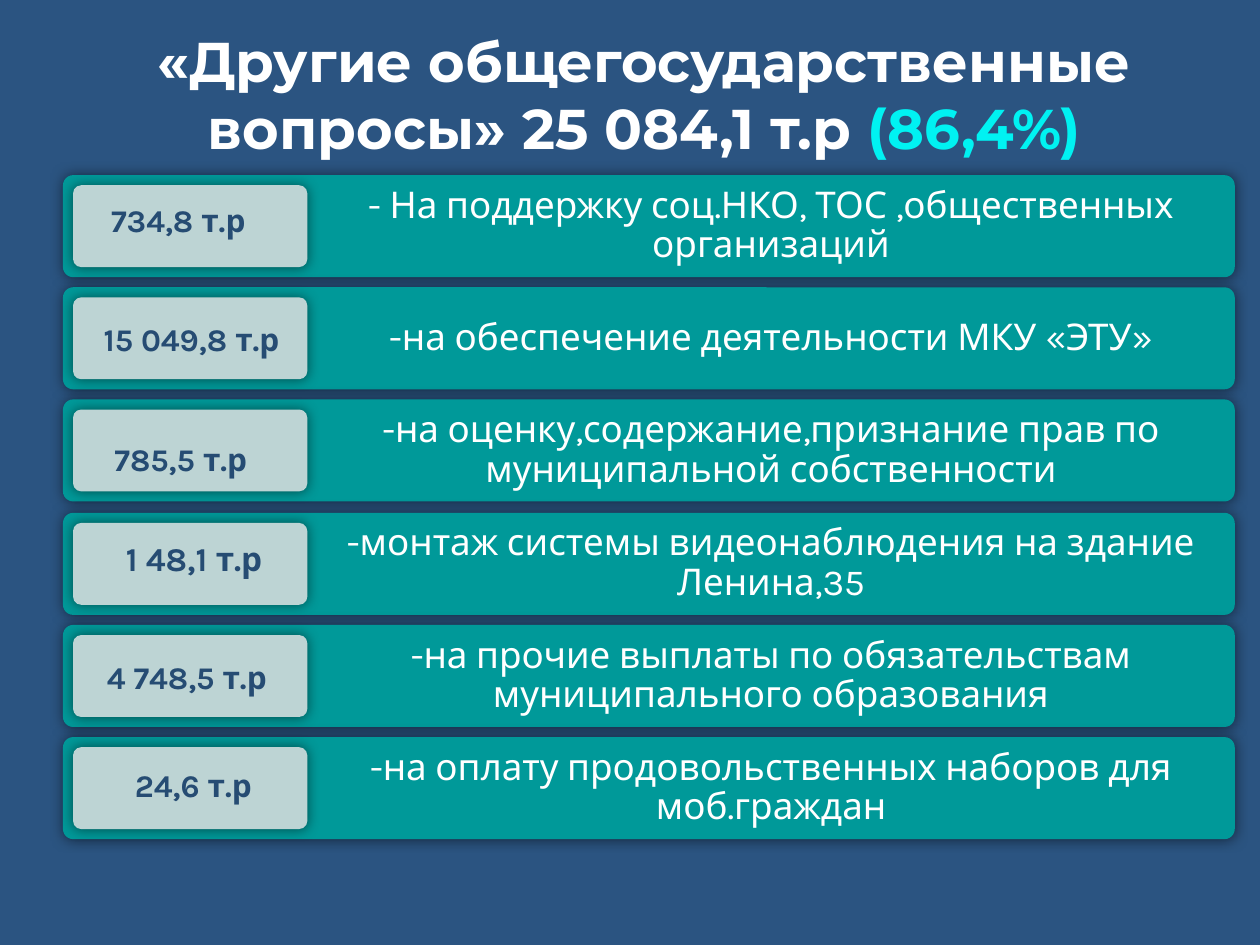
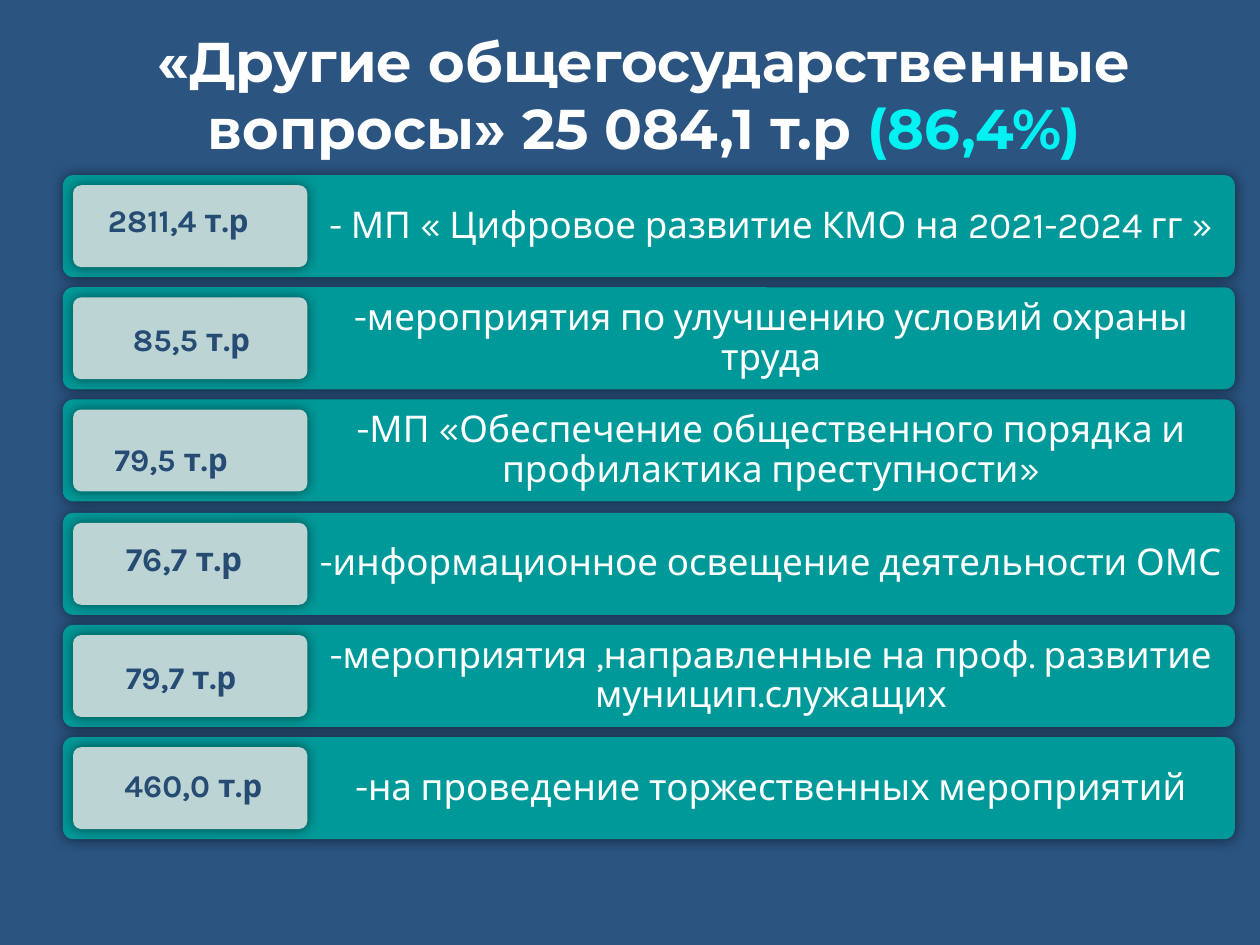
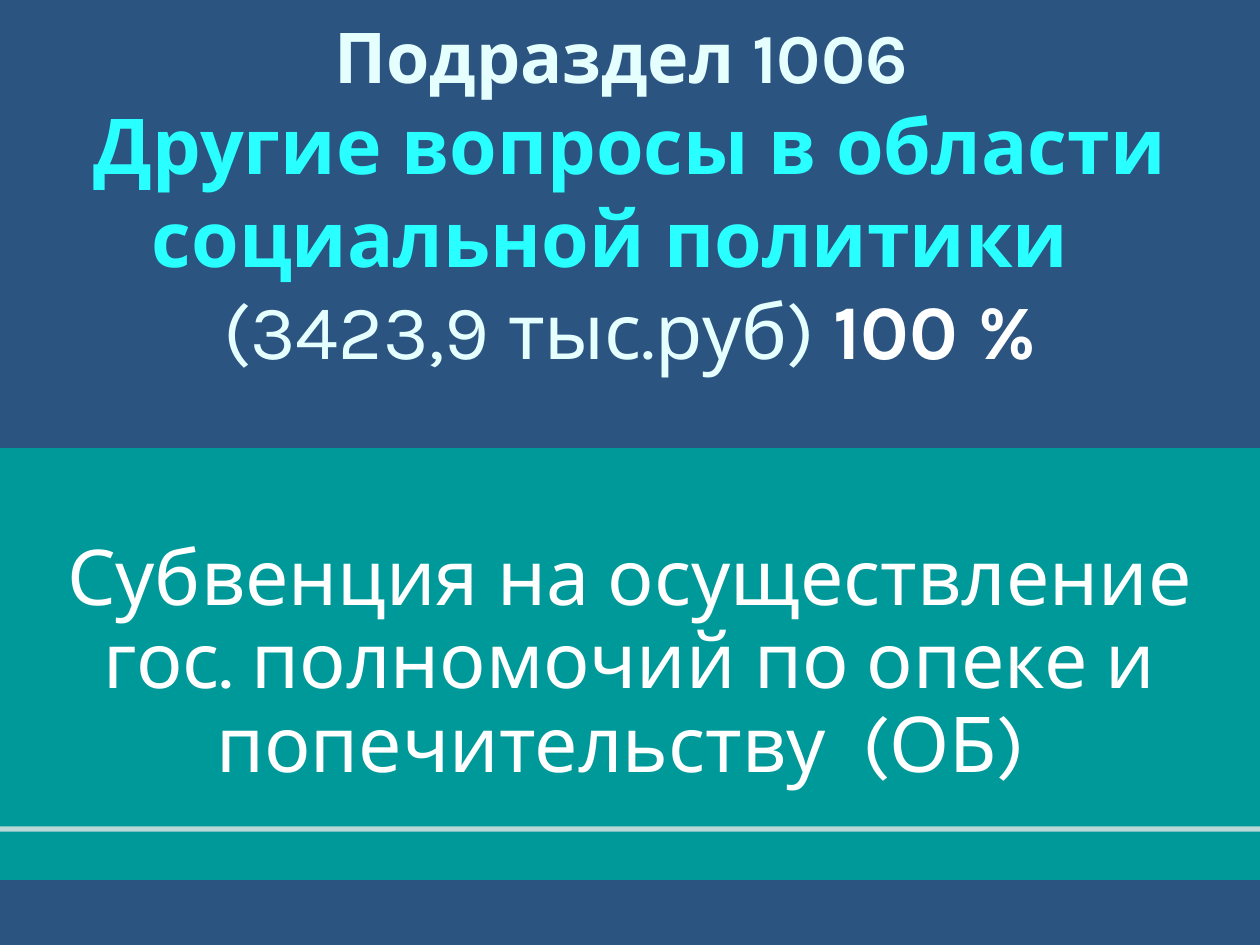
from dataclasses import dataclass

from lxml import etree
from pptx import Presentation
from pptx.dml.color import RGBColor
from pptx.enum.shapes import MSO_CONNECTOR, MSO_SHAPE
from pptx.enum.text import MSO_ANCHOR as Anchor, MSO_AUTO_SIZE, PP_ALIGN as Align
from pptx.oxml.ns import qn
from pptx.util import Emu, Pt

EMU_PER_PX = 9144  # 100 px to the inch
SLIDE_WIDTH, SLIDE_HEIGHT = 1000, 750
TITLE_ONLY = 5

NAVY, TEAL, MIST = "2B5481", "009999", "BDD4D4"
WHITE, PALE, INK = "FFFFFF", "E5FFFF", "264C73"
AQUA, CYAN, RULE = "00F2F2", "29FFFF", "CCDEDE"
BODY_FONT, TITLE_FONT = "Karla", "Montserrat"

BAR_LEFT, BAR_TOP, BAR_WIDTH, BAR_HEIGHT = 50, 139, 930, 81
BAR_PITCH = 89.2
BADGE_INSET, BADGE_WIDTH = 8, 186
PURPOSE_LEFT = BAR_LEFT + BADGE_INSET + BADGE_WIDTH


@dataclass(frozen=True)
class Box:
    left: int
    top: int
    width: int
    height: int

    def emu(self) -> tuple:
        return tuple(map(px, (self.left, self.top, self.width, self.height)))


@dataclass(frozen=True)
class Span:
    text: str
    size: int
    color: str
    bold: bool = True
    font: str = BODY_FONT


@dataclass(frozen=True)
class AmountStyle:
    top: int
    align: Align = Align.CENTER
    size: int = 18


@dataclass(frozen=True)
class Expense:
    amount: str
    left: int
    width: int
    purpose: str


AMOUNT_STYLES = [
    AmountStyle(155),
    AmountStyle(249),
    AmountStyle(344, Align.LEFT),
    AmountStyle(422, Align.LEFT, 19),
    AmountStyle(517, Align.LEFT),
    AmountStyle(603),
]

EXPENSE_SLIDES = [
    [
        Expense("734,8 т.р", 59, 165, "- На поддержку соц.НКО, ТОС ,общественных организаций"),
        Expense("15 049,8 т.р", 51, 202, "-на обеспечение деятельности МКУ «ЭТУ»"),
        Expense("785,5 т.р", 81, 182,
                "-на оценку,содержание,признание прав по муниципальной собственности"),
        Expense("1 48,1 т.р", 90, 152, "-монтаж системы видеонаблюдения на здание Ленина,35"),
        Expense("4 748,5 т.р", 75, 160,
                "-на прочие выплаты по обязательствам муниципального образования"),
        Expense("24,6 т.р", 93, 121, "-на оплату продовольственных наборов для моб.граждан"),
    ],
    [
        Expense("2811,4 т.р", 59, 165, "- МП « Цифровое развитие КМО на 2021-2024 гг »"),
        Expense("85,5 т.р", 51, 202, "-мероприятия по улучшению условий охраны труда"),
        Expense("79,5 т.р", 81, 182,
                "-МП «Обеспечение общественного порядка и профилактика преступности»"),
        Expense("76,7 т.р", 90, 127, "-информационное освещение деятельности ОМС"),
        Expense("79,7 т.р", 90, 134,
                "-мероприятия ,направленные на проф. развитие муницип.служащих"),
        Expense("460,0 т.р", 85, 137, "-на проведение торжественных мероприятий"),
    ],
]

EXPENSE_TITLE = [[
    Span("«Другие общегосударственные вопросы» 25 084,1 т.р ", 32, WHITE, font=TITLE_FONT),
    Span("(86,4%)", 32, AQUA, font=TITLE_FONT),
]]

SOCIAL_TITLE = [
    [Span("Подраздел 1006 ", 40, PALE)],
    [Span("Другие вопросы в области социальной политики  ", 44, CYAN)],
    [Span("(3423,9 тыс.руб) ", 44, PALE, bold=False), Span("100 %", 44, WHITE)],
]


def px(length: float) -> Emu:
    return Emu(round(length * EMU_PER_PX))


def rgb(color: str) -> RGBColor:
    return RGBColor.from_string(color)


def write(paragraph, text: str, *, size: int, color: str, bold: bool = False,
          font: str = BODY_FONT, align: Align = Align.CENTER,
          line_spacing: float = 1.0) -> None:
    """Add one formatted run to the paragraph."""
    paragraph.alignment = align
    paragraph.line_spacing = line_spacing
    run = paragraph.add_run()
    run.text = text
    run.font.name = font
    run.font.size = Pt(size)
    run.font.bold = bold
    run.font.color.rgb = rgb(color)


def format_frame(frame, *, anchor: Anchor = Anchor.TOP, side: int = 10,
                 edge: int = 5, wrap: bool = True) -> None:
    """Set anchor, wrapping and the horizontal and vertical margins."""
    frame.auto_size = MSO_AUTO_SIZE.NONE
    frame.word_wrap = wrap
    frame.vertical_anchor = anchor
    frame.margin_left = frame.margin_right = px(side)
    frame.margin_top = frame.margin_bottom = px(edge)


def add_effects(shape):
    """Give the shape its own, empty effect list."""
    return etree.SubElement(shape._element.spPr, qn("a:effectLst"))


def add_glow_shadow(shape) -> None:
    """Add a centred, half-transparent black shadow."""
    shadow = etree.SubElement(add_effects(shape), qn("a:outerShdw"),
                              blurRad=str(Pt(7.5)), dist="0", dir="0",
                              algn="ctr", rotWithShape="0")
    black = etree.SubElement(shadow, qn("a:srgbClr"), val="000000")
    etree.SubElement(black, qn("a:alpha"), val="50000")


def add_panel(slide, box: Box, color: str, kind=MSO_SHAPE.RECTANGLE):
    shape = slide.shapes.add_shape(kind, *box.emu())
    shape.fill.solid()
    shape.fill.fore_color.rgb = rgb(color)
    shape.line.fill.background()
    return shape


def add_card(slide, box: Box, color: str) -> None:
    card = add_panel(slide, box, color, MSO_SHAPE.ROUNDED_RECTANGLE)
    card.adjustments[0] = 0.1
    add_glow_shadow(card)


def set_title(slide, box: Box, lines: list[list[Span]], edge: int = 5) -> None:
    title = slide.shapes.title
    title.left, title.top, title.width, title.height = box.emu()
    frame = title.text_frame
    format_frame(frame, edge=edge)
    for index, spans in enumerate(lines):
        paragraph = frame.add_paragraph() if index else frame.paragraphs[0]
        for span in spans:
            write(paragraph, span.text, size=span.size, color=span.color,
                  bold=span.bold, font=span.font)


def add_title_slide(presentation):
    return presentation.slides.add_slide(presentation.slide_layouts[TITLE_ONLY])


def add_expense_row(slide, top: int, expense: Expense, style: AmountStyle) -> None:
    add_card(slide, Box(BAR_LEFT, top, BAR_WIDTH, BAR_HEIGHT), TEAL)
    add_card(slide, Box(BAR_LEFT + BADGE_INSET, top + BADGE_INSET,
                        BADGE_WIDTH, BAR_HEIGHT - 2 * BADGE_INSET), MIST)

    purpose_box = Box(PURPOSE_LEFT, top, BAR_LEFT + BAR_WIDTH - PURPOSE_LEFT, BAR_HEIGHT)
    purpose = slide.shapes.add_textbox(*purpose_box.emu()).text_frame
    format_frame(purpose, anchor=Anchor.MIDDLE, side=9, edge=9)
    write(purpose.paragraphs[0], expense.purpose, size=21, color=WHITE, line_spacing=0.9)

    amount_box = Box(expense.left, style.top, expense.width, 40)
    amount = slide.shapes.add_textbox(*amount_box.emu()).text_frame
    format_frame(amount, wrap=False)
    write(amount.paragraphs[0], expense.amount, size=style.size, color=INK,
          bold=True, align=style.align)


def build_expense_slide(presentation, expenses: list[Expense]) -> None:
    slide = add_title_slide(presentation)
    set_title(slide, Box(0, 16, 1023, 172), EXPENSE_TITLE)
    for index, (expense, style) in enumerate(zip(expenses, AMOUNT_STYLES)):
        add_expense_row(slide, round(BAR_TOP + index * BAR_PITCH), expense, style)


def build_social_slide(presentation) -> None:
    slide = add_title_slide(presentation)
    set_title(slide, Box(50, 11, 900, 288), SOCIAL_TITLE, edge=0)

    band = add_panel(slide, Box(0, 358, SLIDE_WIDTH, 338), TEAL)
    band.shadow.inherit = False
    band.line.color.rgb = rgb(TEAL)
    band.line.width = Pt(3)
    format_frame(band.text_frame, anchor=Anchor.MIDDLE, side=34, edge=20)
    write(band.text_frame.paragraphs[0],
          "Субвенция на осуществление гос. полномочий по опеке и попечительству  (ОБ) ",
          size=44, color=WHITE, line_spacing=0.9)

    rule = slide.shapes.add_connector(MSO_CONNECTOR.STRAIGHT, px(0), px(658),
                                      px(SLIDE_WIDTH), px(658))
    rule.line.color.rgb = rgb(RULE)
    rule.line.width = Pt(3)
    color = rule._element.spPr.find(".//" + qn("a:srgbClr"))
    etree.SubElement(color, qn("a:alpha"), val="90000")
    add_effects(rule)


def main() -> None:
    presentation = Presentation()
    presentation.slide_width = px(SLIDE_WIDTH)
    presentation.slide_height = px(SLIDE_HEIGHT)
    background = presentation.slide_master.background.fill
    background.solid()
    background.fore_color.rgb = rgb(NAVY)

    for expenses in EXPENSE_SLIDES:
        build_expense_slide(presentation, expenses)
    build_social_slide(presentation)
    presentation.save("out.pptx")


if __name__ == "__main__":
    main()
